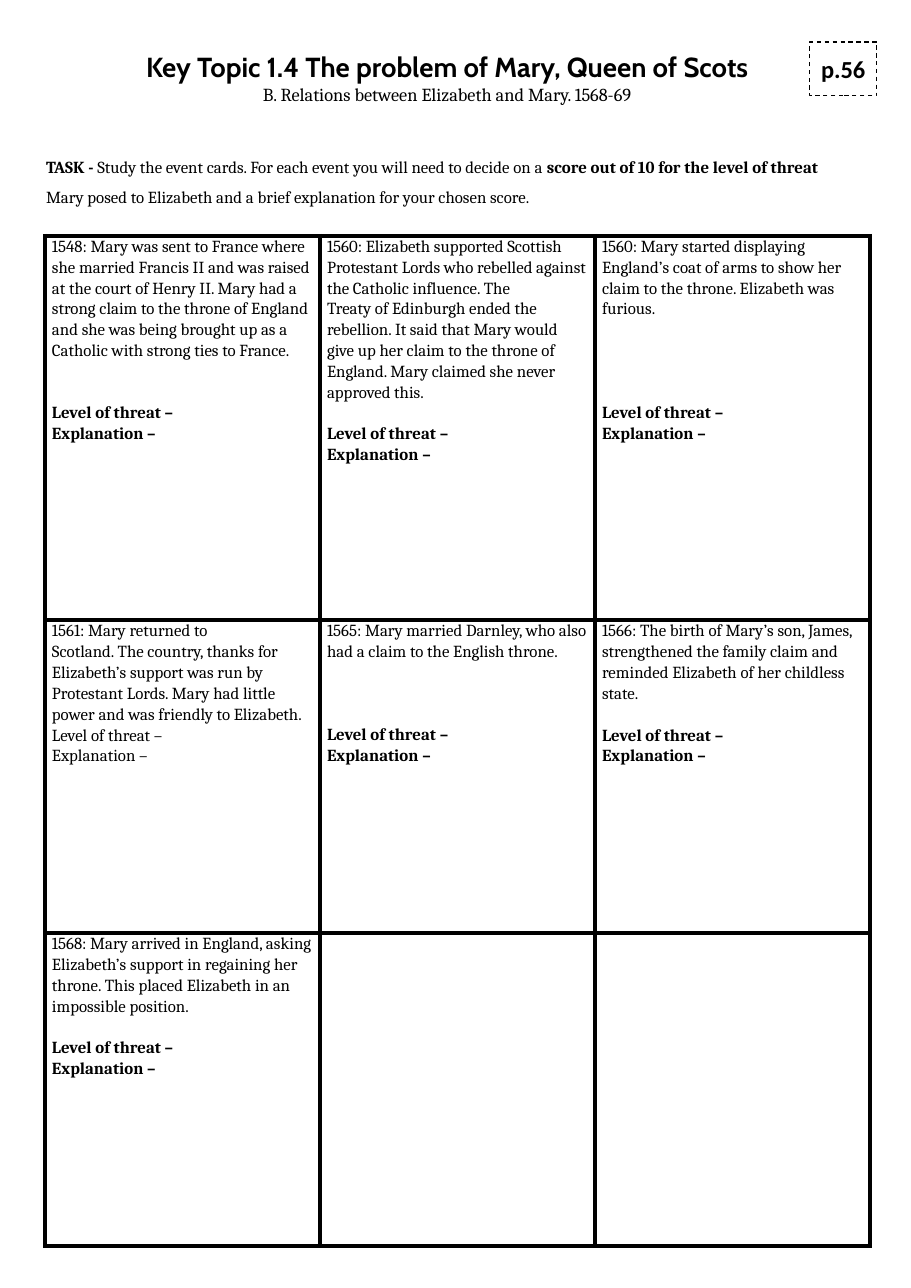
from lxml import etree
from pptx import Presentation
from pptx.dml.color import RGBColor
from pptx.enum import dml, shapes, text
from pptx.oxml import ns
from pptx.util import Pt

HUES = {"ink": "000000", "paper": "FFFFFF"}
INK = RGBColor.from_string(HUES["ink"])
PAPER = RGBColor.from_string(HUES["paper"])
LINE = 13.6  # height of one line of card text


def style(para, size, face="Cambria", bold=False):
    for run in para.runs:
        font = run.font
        font.size, font.name, font.bold = Pt(size), face, bold
        font.color.rgb = INK


def edge(cell, width):
    """Draw a solid border on all four sides of a table cell."""
    props = cell._tc.get_or_add_tcPr()
    for side in ("lnL", "lnR", "lnT", "lnB"):
        line = etree.SubElement(props, ns.qn("a:" + side), w=str(Pt(width)))
        fill = etree.SubElement(line, ns.qn("a:solidFill"))
        etree.SubElement(fill, ns.qn("a:srgbClr"), val=HUES["ink"])


deck = Presentation()
deck.slide_width, deck.slide_height = Pt(595.44), Pt(841.68)
slide = deck.slides.add_slide(deck.slide_layouts[6])

# Task
task = slide.shapes.add_textbox(Pt(23), Pt(92.2), Pt(539.3), Pt(45.4))
task.text_frame.word_wrap = True
para = task.text_frame.paragraphs[0]
para.line_spacing, para.space_after = 1.5, Pt(8)
parts = [
    "TASK -",
    " Study the event cards. For each event you will need to decide on a ",
    "score out of 10 for the level of threat ",
    "Mary posed to Elizabeth and a brief explanation for your chosen score.",
]
for part in parts:
    para.add_run().text = part
style(para, 11)
for i in (0, 2):
    para.runs[i].font.bold = True

# Event cards: event paragraphs, blank lines before the prompts, bold prompts
cards = [
    (["1548: Mary was sent to France where she married Francis II and was "
      "raised at the court of Henry II. Mary had a strong claim to the throne "
      "of England and she was being brought up as a Catholic with strong ties "
      "to France."], 2, True),
    (["1560: Elizabeth supported Scottish Protestant Lords who rebelled "
      "against the Catholic influence. The",
      "Treaty of Edinburgh ended the rebellion. It said that Mary would give "
      "up her claim to the throne of England. Mary claimed she never approved "
      "this."], 1, True),
    (["1560: Mary started displaying England’s coat of arms to show her claim "
      "to the throne. Elizabeth was furious."], 4, True),
    (["1561: Mary returned to",
      "Scotland. The country, thanks for Elizabeth’s support was run by "
      "Protestant Lords. Mary had little power and was friendly to "
      "Elizabeth."], 0, False),
    (["1565: Mary married Darnley, who also had a claim to the English "
      "throne."], 3, True),
    (["1566: The birth of Mary’s son, James, strengthened the family claim "
      "and reminded Elizabeth of her childless state."], 1, True),
    (["1568: Mary arrived in England, asking Elizabeth’s support in regaining "
      "her throne. This placed Elizabeth in an impossible position."], 1, True),
]
prompts = ["Level of threat –", "Explanation –"]
rows = [251.3, 204.5, 204.5]
table = slide.shapes.add_table(
    3, 3, Pt(29.5), Pt(154.1), Pt(539.4), Pt(sum(rows))).table
table.first_row = table.horz_banding = False
for col in table.columns:
    col.width = Pt(179.8)
for row, high in zip(table.rows, rows):
    row.height = Pt(high)

cells = list(table.iter_cells())
for cell in cells:
    edge(cell, 3)
    cell.fill.background()
    cell.margin_left = cell.margin_right = Pt(4.5)
    cell.margin_top = cell.margin_bottom = 0

for cell, (event, gap, bold) in zip(cells, cards):
    frame = cell.text_frame
    frame.text = "\n".join(event + prompts)
    for i, para in enumerate(frame.paragraphs):
        para.line_spacing = 1.07
        style(para, 11, bold=bold and i >= len(event))
    if gap:
        frame.paragraphs[len(event)].space_before = Pt(gap * LINE)

# Title and page tag
title = slide.shapes.add_textbox(Pt(55.4), Pt(26.6), Pt(473.8), Pt(48.2))
title.text_frame.text = ("Key Topic 1.4 The problem of Mary, Queen of Scots\n"
                         "B. Relations between Elizabeth and Mary. 1568-69")
head, sub = title.text_frame.paragraphs
style(head, 18, "Cabin", True)
style(sub, 12)

tag = slide.shapes.add_shape(
    shapes.MSO_SHAPE.RECTANGLE, Pt(529.2), Pt(27.4), Pt(43.9), Pt(35.3))
tag.shadow.inherit = False
tag.fill.solid()
tag.fill.fore_color.rgb = PAPER
tag.line.color.rgb = INK
tag.line.width = Pt(0.75)
tag.line.dash_style = dml.MSO_LINE.DASH
tag.text_frame.text = "p.56"
style(tag.text_frame.paragraphs[0], 16, "Calibri", True)

for box in (title, tag):
    frame = box.text_frame
    frame.word_wrap = True
    frame.vertical_anchor = text.MSO_ANCHOR.MIDDLE
    frame.margin_left = frame.margin_right = Pt(7.2)
    frame.margin_top = frame.margin_bottom = Pt(7.2)
    for para in frame.paragraphs:
        para.alignment = text.PP_ALIGN.CENTER

deck.save("out.pptx")
